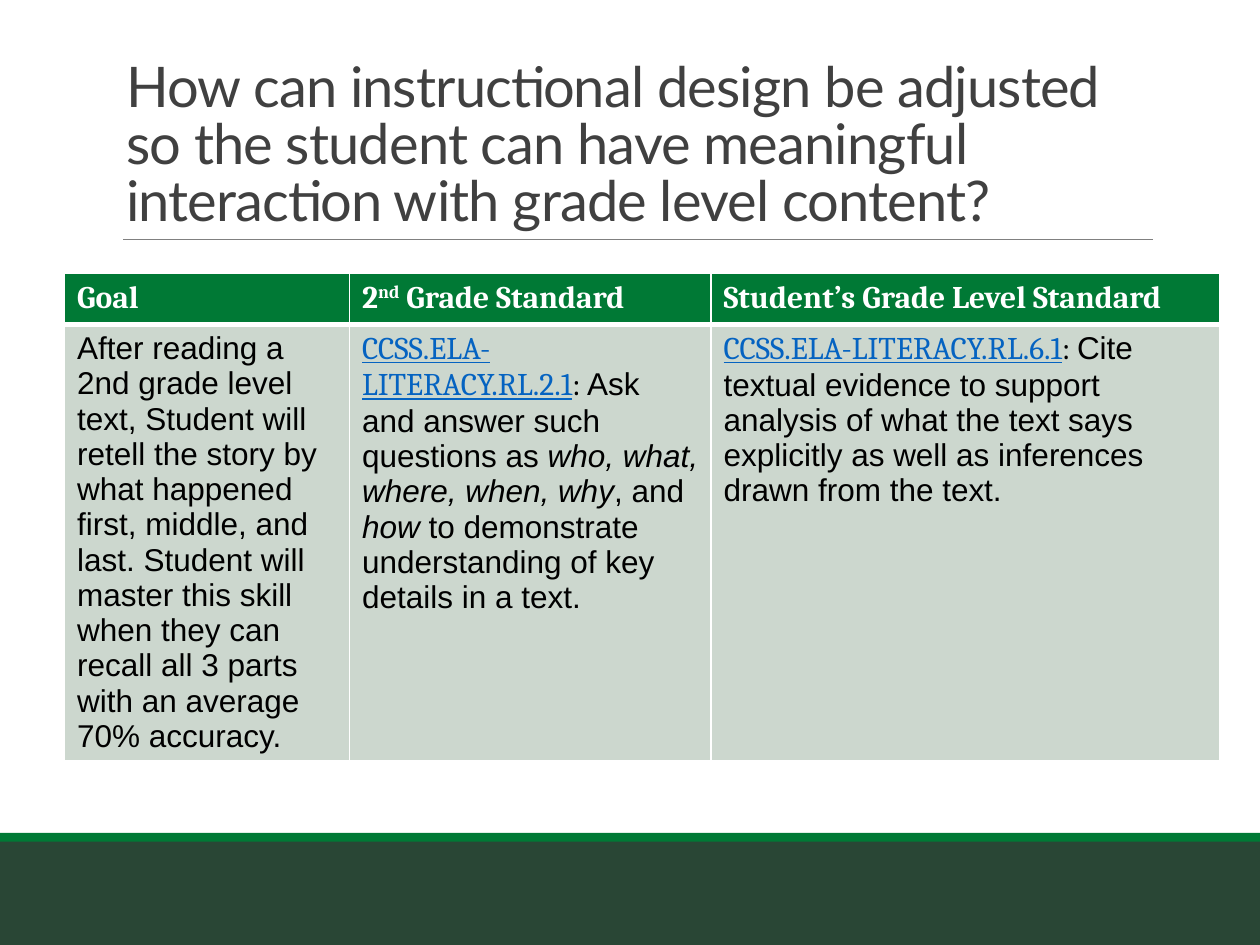
from lxml import etree
from pptx import Presentation
from pptx.dml.color import RGBColor
from pptx.enum.shapes import MSO_CONNECTOR, MSO_SHAPE
from pptx.enum.text import MSO_ANCHOR, MSO_AUTO_SIZE, PP_ALIGN
from pptx.oxml.ns import qn
from pptx.util import Pt

RECT = MSO_SHAPE.RECTANGLE
STRAIGHT = MSO_CONNECTOR.STRAIGHT
BOTTOM = MSO_ANCHOR.BOTTOM
NO_FIT = MSO_AUTO_SIZE.NONE
LEFT = PP_ALIGN.LEFT

COLORS = {
    "dark": "294635",
    "green": "007935",
    "rule": "808080",
    "title": "404040",
    "white": "FFFFFF",
    "black": "000000",
    "cell": "CCD7CE",
    "link": "0563C1",
}


def rgb(name):
    return RGBColor.from_string(COLORS[name])


def add_border(cell, side, width):
    ln = etree.SubElement(cell._tc.get_or_add_tcPr(), qn(f"a:ln{side}"), w=str(Pt(width)))
    fill = etree.SubElement(ln, qn("a:solidFill"))
    etree.SubElement(fill, qn("a:srgbClr"), val=COLORS["white"])


prs = Presentation()
prs.slide_width, prs.slide_height = Pt(720), Pt(540)
s = prs.slides.add_slide(prs.slide_layouts[5])

for top, height, color in [(479.5, 60.5, "dark"), (476, 5, "green")]:
    sp = s.shapes.add_shape(RECT, Pt(0), Pt(top), Pt(720), Pt(height))
    sp.shadow.inherit = False
    sp.fill.solid()
    sp.fill.fore_color.rgb = rgb(color)
    sp.line.fill.background()

rule = s.shapes.add_connector(STRAIGHT, Pt(70.5), Pt(136.8), Pt(659), Pt(136.8))
rule.line.color.rgb = rgb("rule")
rule.line.width = Pt(0.5)
etree.SubElement(rule._element.spPr, qn("a:effectLst"))

title = s.shapes.title
title.left, title.top, title.width, title.height = Pt(65), Pt(22.3), Pt(594), Pt(114.5)
tf = title.text_frame
tf.word_wrap = True
tf.auto_size = NO_FIT
tf.vertical_anchor = BOTTOM
p = tf.paragraphs[0]
p.alignment = LEFT
p.line_spacing = 0.85
r = p.add_run()
r.text = (
    "How can instructional design be adjusted so the student can have "
    "meaningful interaction with grade level content?"
)
r.font.name = "Lato"
r.font.size = Pt(32)
r.font.color.rgb = rgb("title")
r._r.get_or_add_rPr().set("spc", "-50")

STYLES = {
    "head": ("Cambria", "white"),
    "super": ("Cambria", "white"),
    "link": ("Cambria", "link"),
    "colon": ("Cambria", "black"),
    "body": ("Arial", "black"),
    "italic": ("Arial", "black"),
}
ROWS = [
    [
        [("Goal", "head")],
        [("2", "head"), ("nd", "super"), (" Grade Standard", "head")],
        [("Student’s Grade Level Standard", "head")],
    ],
    [
        [("After reading a 2nd grade level text, Student will retell the story by "
          "what happened first, middle, and last. Student will master this skill "
          "when they can recall all 3 parts with an average 70% accuracy.", "body")],
        [("CCSS.ELA-LITERACY.RL.2.1", "link"), (": ", "colon"),
         ("Ask and answer such questions as ", "body"),
         ("who, what, where, when, why", "italic"), (", and ", "body"),
         ("how", "italic"),
         (" to demonstrate understanding of key details in a text.", "body")],
        [("CCSS.ELA-LITERACY.RL.6.1", "link"), (": ", "colon"),
         ("Cite textual evidence to support analysis of what the text says "
          "explicitly as well as inferences drawn from the text.", "body")],
    ],
]
FILLS = ["green", "cell"]
BORDERS = [{"L": 1, "R": 1, "T": 1, "B": 3}, {"L": 1, "R": 1, "T": 3, "B": 1}]
COL_WIDTHS = [162.8, 206.6, 290.8]
ROW_HEIGHTS = [29.2, 248]

table = s.shapes.add_table(
    2, 3, Pt(36.9), Pt(156.3), Pt(sum(COL_WIDTHS)), Pt(sum(ROW_HEIGHTS))
).table
table.horz_banding = False
for col, width in zip(table.columns, COL_WIDTHS):
    col.width = Pt(width)
for row, height in zip(table.rows, ROW_HEIGHTS):
    row.height = Pt(height)

for i, cells in enumerate(ROWS):
    for j, runs in enumerate(cells):
        cell = table.cell(i, j)
        for side, width in BORDERS[i].items():
            add_border(cell, side, width)
        cell.fill.solid()
        cell.fill.fore_color.rgb = rgb(FILLS[i])
        p = cell.text_frame.paragraphs[0]
        for text, style in runs:
            r = p.add_run()
            r.text = text
            name, color = STYLES[style]
            r.font.name = name
            r.font.size = Pt(18)
            r.font.color.rgb = rgb(color)
            r.font.bold = i == 0
            r.font.italic = style == "italic"
            r.font.underline = style == "link"
            if style == "super":
                r._r.get_or_add_rPr().set("baseline", "30000")

prs.save("out.pptx")
